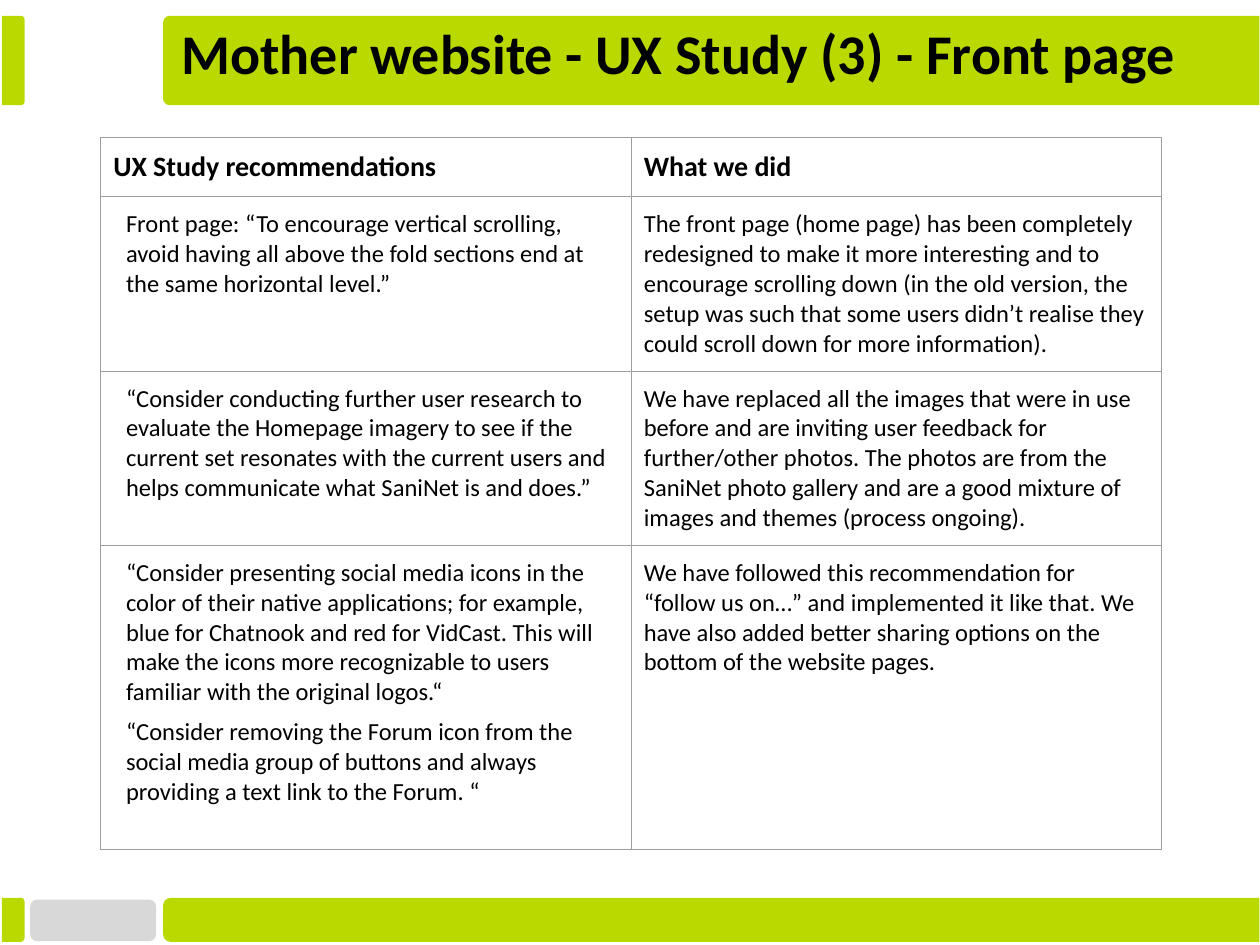
from dataclasses import dataclass
from itertools import product

from lxml import etree
from pptx import Presentation
from pptx.dml.color import RGBColor
from pptx.enum import shapes, text
from pptx.oxml import ns
from pptx.util import Emu, Inches, Pt

# Grid of the slide: 100 columns by 75 rows of square cells
COLS, ROWS = 100, 75
WIDTH, HEIGHT = Inches(10), Inches(7.5)
LIME, GREY, RULE, BLACK = "BAD900", "D8D8D8", "9E9E9E", "000000"
PAD = 1


@dataclass
class Bar:
    """A bar given by its centre and size as seen, in grid cells."""
    x: float
    y: float
    w: float
    h: float
    turn: int = 0
    fill: str = LIME
    bend: float = 0.167


@dataclass
class Row:
    high: float
    left: list[str]
    right: list[str]
    size: int = 14
    bold: bool = False
    inset: float = PAD


BARS = [
    Bar(7.4, 73.05, 10, 3.3, fill=GREY),
    Bar(56.45, 73, 87, 3.5, 270),
    Bar(1.05, 4.8, 1.8, 7.1, 90),
    Bar(56.45, 4.8, 87, 7.1, 270, bend=0.073),
    Bar(1.05, 73, 1.8, 3.5, 90),
]

TABLE = [
    Row(4.7, ["UX Study recommendations"], ["What we did"], 16, True, 0),
    Row(13.8,
        ["Front page: “To encourage vertical scrolling, avoid having all above "
         "the fold sections end at the same horizontal level.”"],
        ["The front page (home page) has been completely redesigned to make it "
         "more interesting and to encourage scrolling down (in the old version, "
         "the setup was such that some users didn’t realise they could scroll "
         "down for more information)."]),
    Row(13.8,
        ["“Consider conducting further user research to evaluate the Homepage "
         "imagery to see if the current set resonates with the current users and "
         "helps communicate what SaniNet is and does.”"],
        ["We have replaced all the images that were in use before and are inviting "
         "user feedback for further/other photos. The photos are from the SaniNet "
         "photo gallery and are a good mixture of images and themes (process "
         "ongoing)."]),
    Row(24.15,
        ["“Consider presenting social media icons in the color of their native "
         "applications; for example, blue for Chatnook and red for VidCast. This "
         "will make the icons more recognizable to users familiar with the "
         "original logos.“",
         "“Consider removing the Forum icon from the social media group of buttons "
         "and always providing a text link to the Forum. “"],
        ["We have followed this recommendation for “follow us on…” and implemented "
         "it like that. We have also added better sharing options on the bottom of "
         "the website pages."]),
]


def across(n: float) -> Emu:
    return Emu(round(WIDTH * n / COLS))


def down(n: float) -> Emu:
    return Emu(round(HEIGHT * n / ROWS))


def tint(code: str) -> RGBColor:
    return RGBColor.from_string(code)


def style(item, **values) -> None:
    for name, value in values.items():
        setattr(item, name, value)


def pad(item) -> None:
    style(item, margin_left=across(PAD), margin_right=across(PAD),
          margin_top=down(PAD), margin_bottom=down(PAD))


def ink(font, size: int, bold: bool) -> None:
    style(font, name="Calibri", size=Pt(size), bold=bold)
    font.color.rgb = tint(BLACK)


def indent(para, left: float, first: float = 0) -> None:
    props = para._p.get_or_add_pPr()
    props.set("marL", str(across(left)))
    props.set("indent", str(across(first)))


def draw_bar(slide, bar: Bar) -> None:
    kind = shapes.MSO_SHAPE
    form = kind.ROUND_2_SAME_RECTANGLE if bar.turn else kind.ROUNDED_RECTANGLE
    # A quarter turn swaps width and height
    w, h = (bar.h, bar.w) if bar.turn else (bar.w, bar.h)
    shape = slide.shapes.add_shape(form, across(bar.x - w / 2),
                                   down(bar.y - h / 2), across(w), down(h))
    shape.adjustments[0] = bar.bend
    shape.rotation = bar.turn
    shape.shadow.inherit = False
    shape.fill.solid()
    shape.fill.fore_color.rgb = tint(bar.fill)
    shape.line.fill.background()


def edge(cell) -> None:
    props = cell._tc.get_or_add_tcPr()
    for spot, side in enumerate(("lnL", "lnR", "lnT", "lnB")):
        line = etree.Element(ns.qn(f"a:{side}"), w=str(Pt(0.75)))
        fill = etree.SubElement(line, ns.qn("a:solidFill"))
        etree.SubElement(fill, ns.qn("a:srgbClr"), val=RULE)
        props.insert(spot, line)


def fill_cell(cell, lines: list[str], row: Row, inset: float) -> None:
    pad(cell)
    cell.fill.background()
    edge(cell)
    cell.text_frame.text = "\n".join(lines)
    for spot, para in enumerate(cell.text_frame.paragraphs):
        indent(para, inset)
        if spot:
            para.space_before = Pt(6)
        ink(para.runs[0].font, row.size, row.bold)


def draw_table(slide, rows: list[Row]) -> None:
    wide = 42.1
    high = sum(row.high for row in rows)
    grid = slide.shapes.add_table(len(rows), 2, across(8), down(10.9),
                                  across(2 * wide), down(high)).table
    style(grid, first_row=False, horz_banding=False)
    for col in grid.columns:
        col.width = across(wide)
    for (r, row), c in product(enumerate(rows), range(2)):
        grid.rows[r].height = down(row.high)
        fill_cell(grid.cell(r, c), (row.left, row.right)[c], row,
                  0 if c else row.inset)


def draw_title(slide, words: str) -> None:
    title = slide.shapes.title
    style(title, left=across(13.4), top=down(1.2), width=across(94.2),
          height=down(6.5))
    frame = title.text_frame
    pad(frame)
    style(frame, text=words, word_wrap=True, auto_size=text.MSO_AUTO_SIZE.NONE,
          vertical_anchor=text.MSO_ANCHOR.MIDDLE)
    para = frame.paragraphs[0]
    indent(para, 2.5, -2.5)
    style(para, alignment=text.PP_ALIGN.LEFT, line_spacing=0.9)
    ink(para.runs[0].font, 32, True)
    # Bring the title in front of the bars
    title.element.getparent().append(title.element)


def main() -> None:
    deck = Presentation()
    style(deck, slide_width=WIDTH, slide_height=HEIGHT)
    slide = deck.slides.add_slide(deck.slide_layouts.get_by_name("Title Only"))
    for bar in BARS:
        draw_bar(slide, bar)
    draw_table(slide, TABLE)
    draw_title(slide, "Mother website - UX Study (3) - Front page")
    deck.save("out.pptx")


if __name__ == "__main__":
    main()
